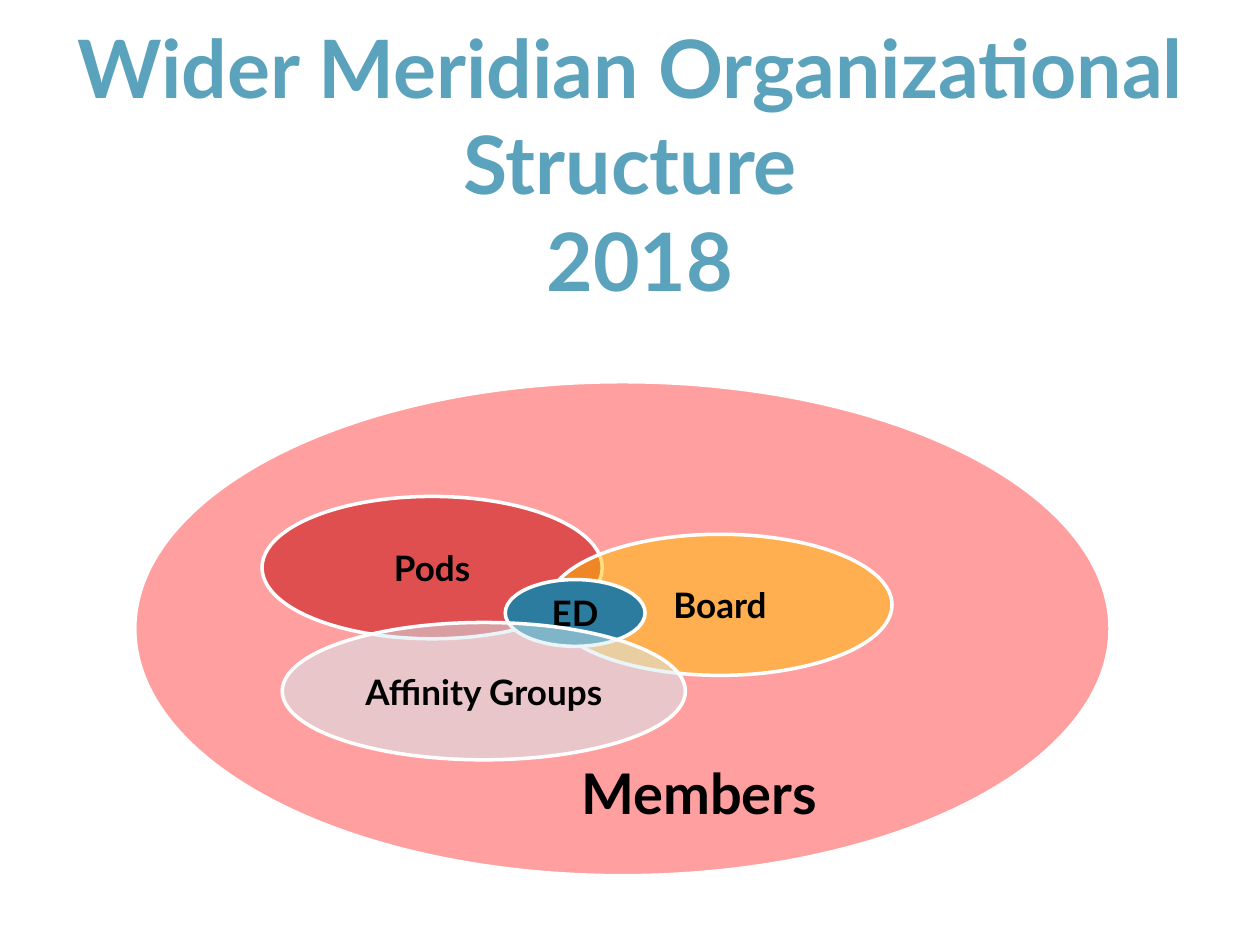
from dataclasses import dataclass

from lxml import etree
from pptx import Presentation
from pptx.dml.color import RGBColor
from pptx.enum import shapes, text
from pptx.oxml import ns
from pptx.util import Inches, Pt


@dataclass(frozen=True)
class Theme:
    font: str = "Lato"
    title: str = "5BA2BC"
    label: str = "000000"
    outline: str = "FFFFFF"
    members: str = "FF4040"
    pods: str = "C00000"
    board: str = "FFC000"
    director: str = "2C7C9F"
    affinity: str = "D5EDF4"
    title_size: int = 46
    members_size: int = 32
    group_size: int = 20
    outline_width: int = 2


THEME = Theme()


def write_lines(frame, lines, size, color):
    """Fill a text frame with centred bold lines, one paragraph each."""
    for index, line in enumerate(lines):
        paragraph = frame.paragraphs[0] if index == 0 else frame.add_paragraph()
        paragraph.alignment = text.PP_ALIGN.CENTER
        run = paragraph.add_run()
        run.text = line
        run.font.name = THEME.font
        run.font.size = Pt(size)
        run.font.bold = True
        run.font.color.rgb = RGBColor.from_string(color)


def add_text(slide, box, lines, size, color, anchor):
    frame = slide.shapes.add_textbox(*map(Inches, box)).text_frame
    frame.word_wrap = True
    frame.vertical_anchor = anchor
    write_lines(frame, lines, size, color)


def add_group(slide, box, fill, opacity, label=None):
    """Draw one ellipse of the diagram, with its label in the centre."""
    ellipse = slide.shapes.add_shape(shapes.MSO_SHAPE.OVAL, *map(Inches, box))
    ellipse.shadow.inherit = False
    ellipse.fill.solid()
    ellipse.fill.fore_color.rgb = RGBColor.from_string(fill)
    if opacity < 100:
        color = ellipse.fill._xPr.find(".//" + ns.qn("a:srgbClr"))
        etree.SubElement(color, ns.qn("a:alpha"), val=str(opacity * 1000))
    ellipse.line.color.rgb = RGBColor.from_string(THEME.outline)
    ellipse.line.width = Pt(THEME.outline_width)
    if label:
        frame = ellipse.text_frame
        frame.word_wrap = False
        frame.vertical_anchor = text.MSO_ANCHOR.MIDDLE
        frame.margin_left = frame.margin_right = 0
        frame.margin_top = frame.margin_bottom = 0
        write_lines(frame, [label], THEME.group_size, THEME.label)


def add_title(slide, box):
    add_text(slide, box, ["Wider Meridian Organizational Structure", " 2018"],
             THEME.title_size, THEME.title, text.MSO_ANCHOR.TOP)


def add_diagram(slide, box):
    """Place the groups inside the members ellipse that fills the box."""
    left, top, _, _ = box
    add_group(slide, box, THEME.members, 50)

    # Groups, back to front: offset in the box, size, fill, opacity, label
    groups = [
        (1.01, 0.91, 2.7, 1.13, THEME.pods, 50, "Pods"),
        (3.28, 1.21, 2.73, 1.12, THEME.board, 50, "Board"),
        (2.94, 1.57, 1.11, 0.53, THEME.director, 100, "ED"),
        (1.17, 1.91, 3.2, 1.09, THEME.affinity, 50, "Affinity Groups"),
    ]
    for x, y, width, height, fill, opacity, label in groups:
        add_group(slide, (left + x, top + y, width, height), fill, opacity, label)

    # Label of the surrounding ellipse
    add_text(slide, (left + 3.23, top + 2.93, 2.5, 0.66), ["Members"],
             THEME.members_size, THEME.label, text.MSO_ANCHOR.MIDDLE)


def main():
    presentation = Presentation()
    presentation.slide_width = Inches(10)
    presentation.slide_height = Inches(7.5)
    slide = presentation.slides.add_slide(presentation.slide_layouts[6])
    add_diagram(slide, (1.07, 3.03, 7.74, 3.92))
    add_title(slide, (0.26, 0.09, 9.48, 2.42))
    presentation.save("out.pptx")


if __name__ == "__main__":
    main()
